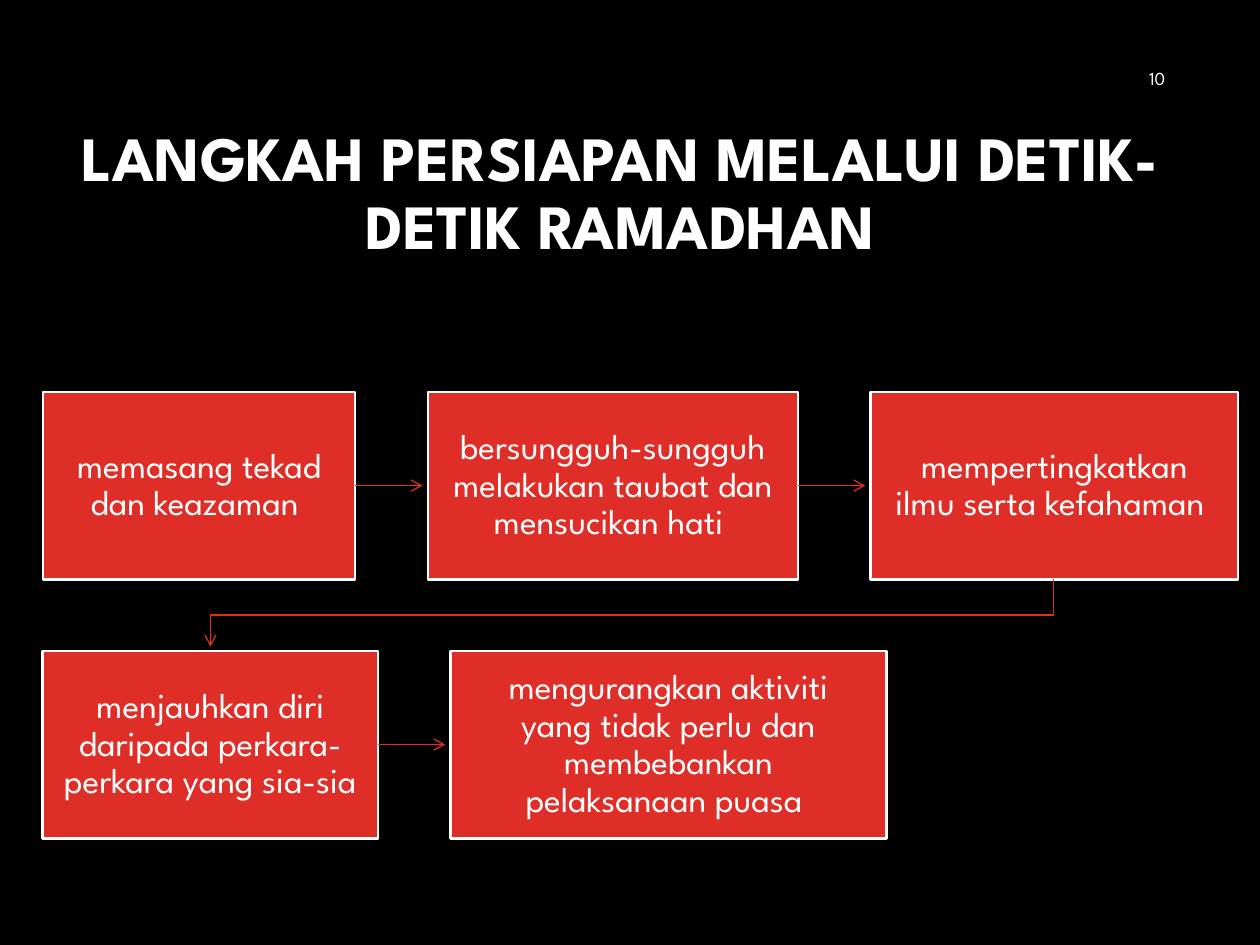
from lxml import etree
from pptx import Presentation
from pptx.dml.color import RGBColor
from pptx.enum.shapes import MSO_CONNECTOR, MSO_SHAPE
from pptx.enum.text import MSO_ANCHOR, MSO_AUTO_SIZE, PP_ALIGN
from pptx.oxml.ns import qn
from pptx.util import Pt

RECTANGLE = MSO_SHAPE.RECTANGLE
STRAIGHT = MSO_CONNECTOR.STRAIGHT
MIDDLE = MSO_ANCHOR.MIDDLE
CENTER, RIGHT = PP_ALIGN.CENTER, PP_ALIGN.RIGHT
COLORS = {"background": "000000", "box": "DF2E28", "text": "FFFFFF"}
FONT = "League Spartan"


def write_text(shape, text, size, bold=False, align=CENTER,
               line_spacing=0.9, space_after=0, inset=None):
    frame = shape.text_frame
    frame.word_wrap = True
    frame.auto_size = MSO_AUTO_SIZE.NONE
    frame.vertical_anchor = MIDDLE
    if inset is not None:
        frame.margin_left = frame.margin_right = Pt(inset)
        frame.margin_top = frame.margin_bottom = Pt(inset)
    paragraph = frame.paragraphs[0]
    paragraph.alignment = align
    paragraph.line_spacing = line_spacing
    paragraph.space_before = Pt(0)
    paragraph.space_after = Pt(space_after)
    run = paragraph.add_run()
    run.text = text
    run.font.name = FONT
    run.font.size = Pt(size)
    run.font.bold = bold
    run.font.color.rgb = RGBColor.from_string(COLORS["text"])


def style_arrow(shape):
    shape.line.color.rgb = RGBColor.from_string(COLORS["box"])
    shape.line.width = Pt(0.75)
    etree.SubElement(shape.line._get_or_add_ln(), qn("a:tailEnd"), type="arrow")
    properties = shape._element.spPr
    if properties.find(qn("a:effectLst")) is None:
        etree.SubElement(properties, qn("a:effectLst"))


presentation = Presentation()
presentation.slide_width, presentation.slide_height = Pt(720), Pt(540)
slide = presentation.slides.add_slide(presentation.slide_layouts[5])
slide.background.fill.solid()
slide.background.fill.fore_color.rgb = RGBColor.from_string(COLORS["background"])

# Title
title = slide.shapes.title
title.left, title.top, title.width, title.height = Pt(36), Pt(60.5), Pt(637), Pt(101.5)
write_text(title, "LANGKAH PERSIAPAN MELALUI DETIK-DETIK RAMADHAN", 36, bold=True)

# Slide number
number = slide.shapes.add_textbox(Pt(517.5), Pt(30), Pt(155.5), Pt(29))
write_text(number, "10", 10.5, align=RIGHT, line_spacing=1)

# Rows of steps: top, then width and text of each box
ROWS = [
    (224, [(178.5, "memasang tekad dan keazaman "),
           (211.5, "bersungguh-sungguh melakukan taubat dan mensucikan hati "),
           (210, "mempertingkatkan ilmu serta kefahaman ")]),
    (372, [(191.5, "menjauhkan diri daripada perkara-perkara yang sia-sia"),
           (249, "mengurangkan aktiviti yang tidak perlu dan membebankan "
                 "pelaksanaan puasa ")]),
]
ROW_LEFT, BOX_HEIGHT, GAP, ARROW_LENGTH = 24.5, 107, 41.5, 38.5

for top, steps in ROWS:
    left = ROW_LEFT
    for index, (width, text) in enumerate(steps):
        box = slide.shapes.add_shape(RECTANGLE, Pt(left), Pt(top), Pt(width), Pt(BOX_HEIGHT))
        box.shadow.inherit = False
        box.fill.solid()
        box.fill.fore_color.rgb = RGBColor.from_string(COLORS["box"])
        box.line.color.rgb = RGBColor.from_string(COLORS["text"])
        box.line.width = Pt(1.5)
        write_text(box, text, 20, space_after=7, inset=11.5)
        right, middle = left + width, top + BOX_HEIGHT / 2
        if index < len(steps) - 1:
            arrow = slide.shapes.add_connector(
                STRAIGHT, Pt(right), Pt(middle), Pt(right + ARROW_LENGTH), Pt(middle))
            style_arrow(arrow)
        left = right + GAP

# Bent arrow from the last box of the first row to the second row
start_x, end_x = 602, ROW_LEFT + ROWS[1][1][0][0] / 2
start_y, end_y = ROWS[0][0] + BOX_HEIGHT, ROWS[1][0] - 2.5
bend_y = (ROWS[0][0] + BOX_HEIGHT + ROWS[1][0]) / 2
builder = slide.shapes.build_freeform(Pt(start_x), Pt(start_y))
builder.add_line_segments(
    [(Pt(start_x), Pt(bend_y)), (Pt(end_x), Pt(bend_y)), (Pt(end_x), Pt(end_y))],
    close=False)
bent_arrow = builder.convert_to_shape()
bent_arrow.fill.background()
style_arrow(bent_arrow)

presentation.save("out.pptx")
